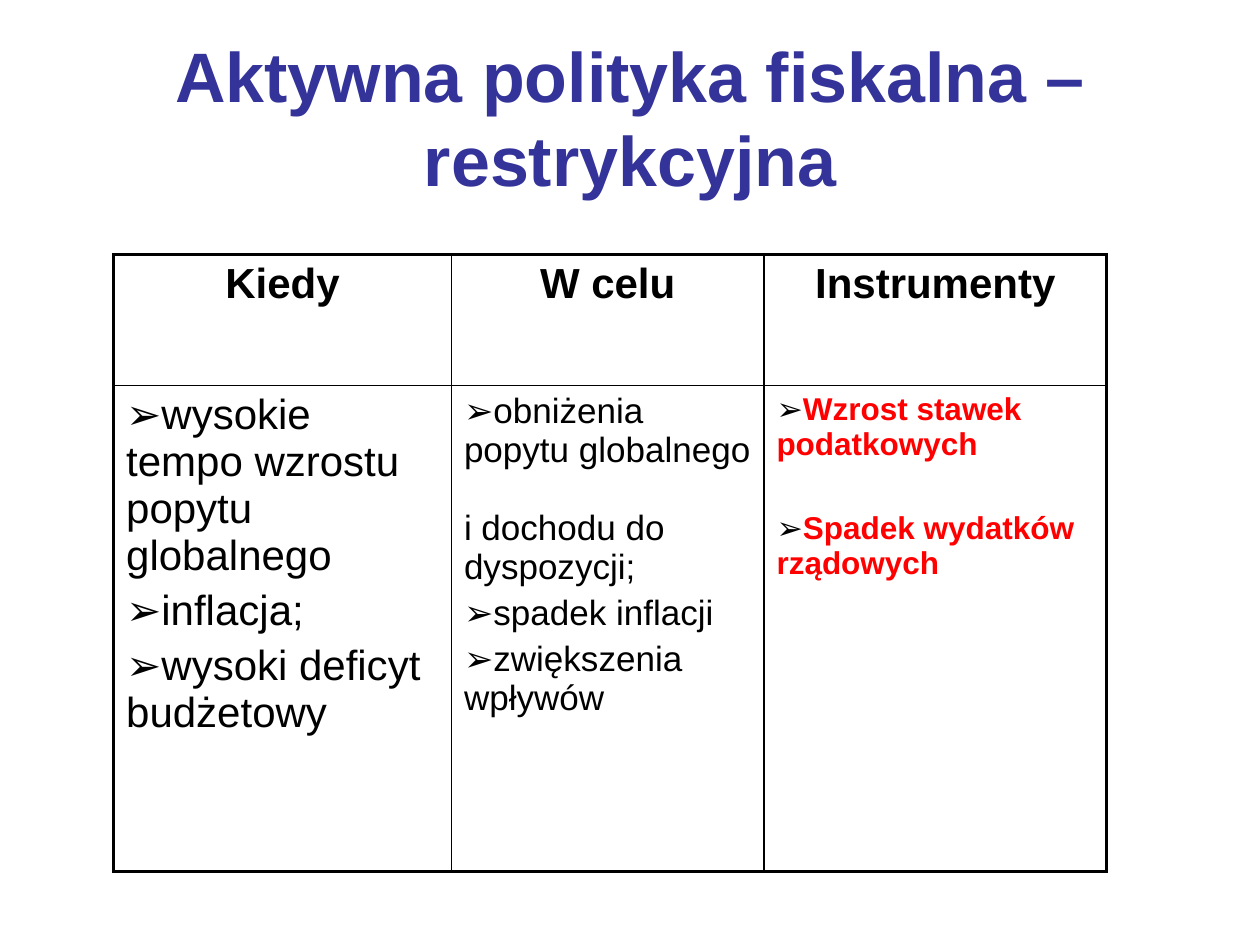
"""Build the slide on restrictive fiscal policy: a title and a bordered table."""
from dataclasses import dataclass

from lxml.etree import SubElement as Sub
from pptx import Presentation as Deck
from pptx.dml.color import RGBColor as Rgb
from pptx.enum.text import MSO_ANCHOR as Anchor, MSO_AUTO_SIZE as Fit, PP_ALIGN as Align
from pptx.oxml.ns import qn
from pptx.util import Cm, Pt

HUES = {"title": "333399", "ink": "000000", "alert": "FF0000"}
FACE = "Arial"
THICK, THIN = 2.25, 1
ROWS = (2.64, 9.8)


@dataclass
class Column:
    head: str
    width: float
    size: int
    items: tuple[str, ...]
    hue: str = "ink"
    bold: bool = False
    gap: float = 0


COLUMNS = (
    Column("Kiedy", 6.81, 24, (
        "wysokie tempo wzrostu popytu globalnego",
        "inflacja;",
        "wysoki deficyt budżetowy",
    )),
    Column("W celu", 6.3, 20, (
        "obniżenia popytu globalnego \vi dochodu do dyspozycji;",
        "spadek inflacji",
        "zwiększenia wpływów",
    )),
    Column("Instrumenty", 6.91, 18, (
        "Wzrost stawek podatkowych",
        "Spadek wydatków rządowych",
    ), "alert", True, 24),
)


def style(para, size: float, hue: str, bold: bool) -> None:
    font = para.font
    font.name, font.size, font.bold = FACE, Pt(size), bold
    font.color.rgb = Rgb.from_string(HUES[hue])


def bullet(para) -> None:
    props = para._p.get_or_add_pPr()
    props.set("marL", "0")
    props.set("indent", "0")
    tint = Sub(props, qn("a:buClr"))
    Sub(tint, qn("a:srgbClr"), val=HUES["ink"])
    Sub(props, qn("a:buFont"), typeface=FACE)
    Sub(props, qn("a:buChar"), char="➢")


def frame(cell, row: int, col: int) -> None:
    props = cell._tc.get_or_add_tcPr()
    outer = {"L": col == 0, "R": col == len(COLUMNS) - 1,
             "T": row == 0, "B": row == len(ROWS) - 1}
    for side, edge in outer.items():
        width = Pt(THICK if edge else THIN)
        line = Sub(props, qn(f"a:ln{side}"), w=str(int(width)))
        fill = Sub(line, qn("a:solidFill"))
        Sub(fill, qn("a:srgbClr"), val=HUES["ink"])
    cell.fill.background()


def fill_head(cell, text: str) -> None:
    para = cell.text_frame.paragraphs[0]
    para.text = text
    para.alignment = Align.CENTER
    style(para, 24, "ink", True)


def fill_list(cell, col: Column) -> None:
    body = cell.text_frame
    for i, text in enumerate(col.items):
        para = body.add_paragraph() if i else body.paragraphs[0]
        para.text = text
        bullet(para)
        if i:
            para.space_before = Pt(col.size * 0.2 + col.gap)
        style(para, col.size, col.hue, col.bold)


def add_title(slide) -> None:
    title = slide.shapes.title
    title.left, title.top = Cm(1.27), Cm(0.76)
    title.width, title.height = Cm(22.86), Cm(3.18)
    body = title.text_frame
    body.text = "Aktywna polityka fiskalna – restrykcyjna"
    body.word_wrap, body.auto_size = True, Fit.NONE
    body.vertical_anchor = Anchor.MIDDLE
    para = body.paragraphs[0]
    para.alignment = Align.CENTER
    style(para, 40, "title", True)


def add_grid(slide) -> None:
    width = sum(col.width for col in COLUMNS)
    grid = slide.shapes.add_table(
        len(ROWS), len(COLUMNS), Cm(2.29), Cm(5.13), Cm(width), Cm(sum(ROWS))
    ).table
    grid.first_row = grid.horz_banding = False
    for row, high in zip(grid.rows, ROWS):
        row.height = Cm(high)
    for c, col in enumerate(COLUMNS):
        grid.columns[c].width = Cm(col.width)
        fill_head(grid.cell(0, c), col.head)
        fill_list(grid.cell(1, c), col)
        for r in range(len(ROWS)):
            frame(grid.cell(r, c), r, c)


def main() -> None:
    deck = Deck()
    deck.slide_width, deck.slide_height = Cm(25.4), Cm(19.05)
    slide = deck.slides.add_slide(deck.slide_layouts[5])
    add_title(slide)
    add_grid(slide)
    deck.save("out.pptx")


if __name__ == "__main__":
    main()
